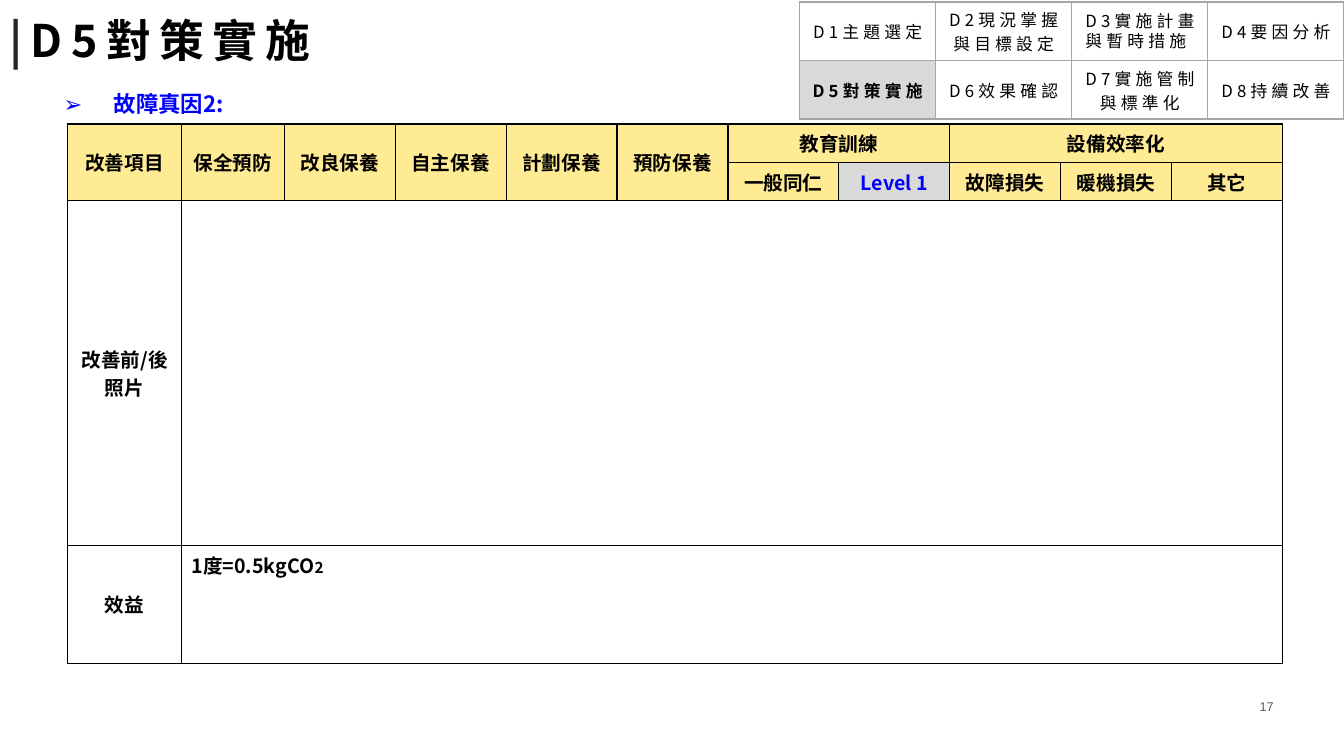
from lxml.etree import SubElement
from pptx import Presentation
from pptx.dml.color import RGBColor
from pptx.enum.text import MSO_ANCHOR, PP_ALIGN
from pptx.oxml import parse_xml
from pptx.oxml.ns import nsdecls, qn
from pptx.util import Inches, Pt

BLACK = RGBColor(0x00, 0x00, 0x00)
BLUE = RGBColor(0x00, 0x00, 0xFF)
CHARCOAL = RGBColor(0x26, 0x26, 0x26)
PAGE_GRAY = RGBColor(0x59, 0x59, 0x59)
GRID_GRAY = RGBColor(0xA6, 0xA6, 0xA6)
ACTIVE_GRAY = RGBColor(0xD9, 0xD9, 0xD9)
YELLOW = RGBColor(0xFF, 0xEB, 0x94)

STEPS = [
    ["D1主題選定", "D2現況掌握\n與目標設定", "D3實施計畫\n與暫時措施 ", "D4要因分析"],
    ["D5對策實施", "D6效果確認", "D7實施管制\n與標準化", "D8持續改善"],
]
CURRENT_STEP = "D5對策實施"
MAIN_HEADS = ["改善項目", "保全預防", "改良保養", "自主保養", "計劃保養", "預防保養"]
GROUPS = {"教育訓練": ["一般同仁", "Level 1"],
          "設備效率化": ["故障損失", "暖機損失", "其它"]}


def add_run(p, text, size=14, color=BLACK, bold=False, font="Noto Sans CJK SC", spacing=0):
    r = p.add_run()
    r.text = text
    r.font.size, r.font.bold, r.font.name = Pt(size), bold, font
    r.font.color.rgb = color
    rPr = r._r.get_or_add_rPr()
    SubElement(rPr, qn("a:ea")).set("typeface", font)
    if spacing:
        rPr.set("spc", str(spacing * 100))
    return r


class SlideBuilder:
    def __init__(self, prs):
        self.slide = prs.slides.add_slide(prs.slide_layouts[1])

    def place(self, sp, left, top, width, height, anchor=MSO_ANCHOR.TOP):
        sp.left, sp.top = Inches(left), Inches(top)
        sp.width, sp.height = Inches(width), Inches(height)
        tf = sp.text_frame
        tf.word_wrap, tf.vertical_anchor = True, anchor
        return tf

    def title(self, text):
        tf = self.place(self.slide.shapes.title, 0.02, 0.02, 7.91, 0.75, MSO_ANCHOR.MIDDLE)
        tf.margin_left = tf.margin_right = Inches(0.07)
        tf.margin_top = tf.margin_bottom = Inches(0.04)
        p = tf.paragraphs[0]
        p.alignment = PP_ALIGN.LEFT
        add_run(p, "|", size=32, color=CHARCOAL, bold=True, spacing=6)
        add_run(p, text, size=32, bold=True, spacing=6)

    def bullet(self, text):
        p = self.place(self.slide.placeholders[1], 0.53, 0.84, 10.09, 0.37).paragraphs[0]
        p.space_before = Pt(0)
        pPr = p._p.get_or_add_pPr()
        pPr.set("marL", str(Inches(0.5)))
        pPr.set("indent", str(Inches(-0.5)))
        SubElement(pPr, qn("a:buFont")).set("typeface", "Wingdings 2")
        pPr[-1].set("typeface", "Noto Sans CJK SC")
        SubElement(pPr, qn("a:buChar")).set("char", "➢")
        add_run(p, text, size=16, color=BLUE, bold=True)

    def page_number(self, number):
        sp = self.slide.shapes.add_textbox(0, 0, 0, 0)
        p = self.place(sp, 12.02, 6.85, 0.71, 0.31, MSO_ANCHOR.MIDDLE).paragraphs[0]
        p.alignment = PP_ALIGN.RIGHT
        add_run(p, number, size=9, color=PAGE_GRAY, font="Arial")

    def table(self, left, top, widths, heights, border):
        frame = self.slide.shapes.add_table(
            len(heights), len(widths), Inches(left), Inches(top),
            Inches(sum(widths)), Inches(sum(heights)))
        tbl = frame.table
        tbl.first_row = tbl.horz_banding = False
        for col, width in zip(tbl.columns, widths):
            col.width = Inches(width)
        for row, height in zip(tbl.rows, heights):
            row.height = Inches(height)
        for cell in tbl.iter_cells():
            tcPr = cell._tc.get_or_add_tcPr()
            for side in ("lnL", "lnR", "lnT", "lnB"):
                tcPr.append(parse_xml(
                    f'<a:{side} {nsdecls("a")} w="{Pt(1)}"><a:solidFill>'
                    f'<a:srgbClr val="{border}"/></a:solidFill></a:{side}>'))
            cell.fill.background()
        return tbl

    def cell(self, cell, text, fill=None, line_spacing=None, **fmt):
        """Fill a cell with centred text, one paragraph per line."""
        cell.vertical_anchor = MSO_ANCHOR.MIDDLE
        if fill is not None:
            cell.fill.solid()
            cell.fill.fore_color.rgb = fill
        tf = cell.text_frame
        for i, line in enumerate(text.split("\n")):
            p = tf.add_paragraph() if i else tf.paragraphs[0]
            p.alignment = PP_ALIGN.CENTER
            p.line_spacing = line_spacing
            add_run(p, line, **fmt)

    def step_table(self):
        tbl = self.table(7.93, 0.02, [1.35] * 4, [0.58] * 2, GRID_GRAY)
        for r, steps in enumerate(STEPS):
            for c, step in enumerate(steps):
                cell = tbl.cell(r, c)
                cell.margin_left = cell.margin_right = Inches(0.05)
                current = step == CURRENT_STEP
                self.cell(cell, step, fill=ACTIVE_GRAY if current else None,
                          line_spacing=0.85 if step.startswith("D3") else None,
                          size=12, bold=current, spacing=3)

    def measure_table(self):
        tbl = self.table(0.67, 1.23, [1.13, 1.02] + [1.1] * 9,
                         [0.38, 0.38, 3.42, 1.17], BLACK)
        for c, head in enumerate(MAIN_HEADS):
            tbl.cell(0, c).merge(tbl.cell(1, c))
            self.cell(tbl.cell(0, c), head, fill=YELLOW, bold=True)
        c = len(MAIN_HEADS)
        for group, heads in GROUPS.items():
            tbl.cell(0, c).merge(tbl.cell(0, c + len(heads) - 1))
            self.cell(tbl.cell(0, c), group, fill=YELLOW, bold=True)
            for head in heads:
                chosen = head == "Level 1"
                self.cell(tbl.cell(1, c), head, fill=ACTIVE_GRAY if chosen else YELLOW,
                          color=BLUE if chosen else BLACK, bold=True)
                c += 1
        for r, label in enumerate(["改善前/後\n照片", "效益"], start=2):
            self.cell(tbl.cell(r, 0), label, bold=True)
            tbl.cell(r, 1).merge(tbl.cell(r, c - 1))
        p = tbl.cell(3, 1).text_frame.paragraphs[0]
        add_run(p, "1度=0.5kgCO", bold=True)
        add_run(p, "2", size=11, bold=True)


def main():
    prs = Presentation()
    prs.slide_width, prs.slide_height = Inches(13.33), Inches(7.5)
    s = SlideBuilder(prs)
    s.page_number("17")
    s.title("D5對策實施")
    s.step_table()
    s.measure_table()
    s.bullet("故障真因2:")
    prs.save("out.pptx")


if __name__ == "__main__":
    main()
